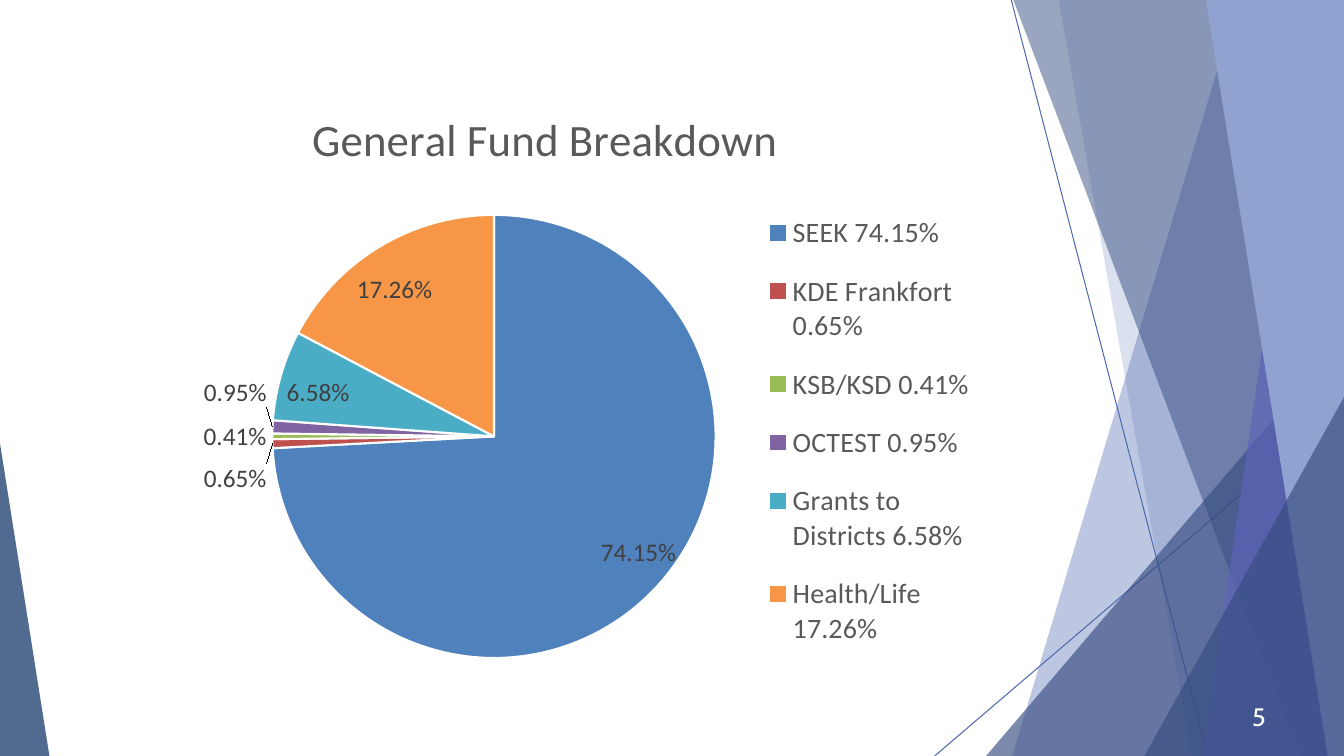
import pptx
import pptx.chart.data
import pptx.dml.color
import pptx.enum.chart
import pptx.enum.shapes
import pptx.oxml.ns
import pptx.util
from pptx.util import Inches

RGB = pptx.dml.color.RGBColor
BLUE = RGB(0x4A, 0x66, 0xAC)
NAVY = RGB(0x37, 0x4D, 0x81)
VIOLET = RGB(0x5C, 0x64, 0xB7)
PALE = RGB(0x90, 0xA2, 0xCF)
DEEP = RGB(0x07, 0x2C, 0x62)
WHITE = RGB(0xFF, 0xFF, 0xFF)
BLACK = RGB(0x00, 0x00, 0x00)
GREY = RGB(0x59, 0x59, 0x59)
DARK = RGB(0x40, 0x40, 0x40)
W, H = 13.33, 7.5
qn = pptx.oxml.ns.qn


def set_layout(parent, index, **values):
    """Give a chart part a manual layout, as fractions of the chart."""
    for old in parent.findall(qn("c:layout")):
        parent.remove(old)
    layout = parent.makeelement(qn("c:layout"))
    manual = layout.makeelement(qn("c:manualLayout"))
    layout.append(manual)
    for tag, value in values.items():
        manual.append(manual.makeelement(qn("c:" + tag), {"val": str(value)}))
    parent.insert(index, layout)


def style_font(font, size, color, name="Calibri"):
    for key, value in {"size": pptx.util.Pt(size), "name": name, "bold": False}.items():
        setattr(font, key, value)
    font.color.rgb = color


prs = pptx.Presentation()
prs.slide_width, prs.slide_height = Inches(W), Inches(H)
s = prs.slides.add_slide(prs.slide_layouts[6])

# Thin crossing lines
for x1, y1, x2, y2 in [(10.03, 0, 11.98, H), (W, 4.03, 9.27, H)]:
    line = s.shapes.add_connector(pptx.enum.shapes.MSO_CONNECTOR.STRAIGHT,
                                  Inches(x1), Inches(y1), Inches(x2), Inches(y2))
    line.line.color.rgb = BLUE
    line.line.width = pptx.util.Pt(0.72)
    sp_pr = line._element.spPr
    sp_pr.append(sp_pr.makeelement(qn("a:effectLst")))

# Translucent facets: points, colour, opacity in percent
facets = [
    ([(W, 0), (12.28, 0), (10.04, H), (W, H)], BLUE, 36),
    ([(W, 0), (10.5, 0), (11.82, H), (W, H)], BLUE, 20),
    ([(W, 3.34), (9.78, H), (W, H)], NAVY, 66),
    ([(W, 0), (10.05, 0), (12.89, H), (W, H)], NAVY, 50),
    ([(W, 0), (13.03, 0), (11.92, H), (W, H)], VIOLET, 70),
    ([(W, 0), (11.96, 0), (13.17, H), (W, H)], PALE, 100),
    ([(W, 3.94), (11.35, H), (W, H)], NAVY, 66),
    ([(0, 4.4), (0, H), (0.49, H)], DEEP, 70),
]
for points, color, opacity in facets:
    corners = [(Inches(x), Inches(y)) for x, y in points]
    builder = s.shapes.build_freeform(*corners[0])
    builder.add_line_segments(corners[1:], close=True)
    sp = builder.convert_to_shape()
    sp.shadow.inherit = False
    sp.line.fill.background()
    sp.fill.solid()
    sp.fill.fore_color.rgb = color
    if opacity < 100:
        clr = sp._element.spPr.find(".//" + qn("a:srgbClr"))
        clr.append(clr.makeelement(qn("a:alpha"), {"val": str(opacity * 1000)}))

# Pie chart: category, share, colour, label position, label shift
POSITION = pptx.enum.chart.XL_LABEL_POSITION
INSIDE, OUTSIDE = POSITION.INSIDE_END, POSITION.OUTSIDE_END
slices = [
    ("SEEK 74.15%", 0.7415, RGB(0x4F, 0x81, 0xBD), INSIDE, (0.03, -0.03)),
    ("KDE Frankfort 0.65%", 0.0065, RGB(0xC0, 0x50, 0x4D), OUTSIDE, (0, 0.06)),
    ("KSB/KSD 0.41%", 0.0041, RGB(0x9B, 0xBB, 0x59), OUTSIDE, None),
    ("OCTEST 0.95%", 0.0095, RGB(0x80, 0x64, 0xA2), OUTSIDE, (0, -0.06)),
    ("Grants to Districts 6.58%", 0.0658, RGB(0x4B, 0xAC, 0xC6), INSIDE, None),
    ("Health/Life 17.26%", 0.1726, RGB(0xF7, 0x96, 0x46), INSIDE, (-0.03, 0.04)),
]
data = pptx.chart.data.CategoryChartData(number_format="0.00%")
data.categories = [name for name, *_ in slices]
data.add_series("Series 1", [share for _, share, *_ in slices])
chart = s.shapes.add_chart(pptx.enum.chart.XL_CHART_TYPE.PIE, Inches(1.39), Inches(0.99),
                           Inches(8.56), Inches(5.71), data).chart
style_font(chart.font, 10, BLACK)

chart.has_title = True
title = chart.chart_title
title.text_frame.text = "General Fund Breakdown"
style_font(title.text_frame.paragraphs[0].runs[0].font, 32, GREY)
title.include_in_layout = False
set_layout(title._element, 1, xMode="edge", yMode="edge", x=0.19, y=0)

chart.has_legend = True
legend = chart.legend
legend.position = pptx.enum.chart.XL_LEGEND_POSITION.RIGHT
legend.include_in_layout = False
style_font(legend.font, 20, GREY)
set_layout(legend._element, 1, xMode="edge", yMode="edge", x=0.72, y=0.16, w=0.25, h=0.83)

plot = chart.plots[0]
plot.vary_by_categories = True
set_layout(plot._element.getparent(), 0, layoutTarget="inner", xMode="edge", yMode="edge",
           x=0.15, y=0.2, w=0.52, h=0.77)

plot.has_data_labels = True
labels = plot.series[0].data_labels
labels.show_value = True
labels.number_format = "0.00%"
labels.number_format_is_linked = False
style_font(labels.font, 18, DARK)

for i, (_, _, color, position, shift) in enumerate(slices):
    point = plot.series[0].points[i]
    point.format.fill.solid()
    point.format.fill.fore_color.rgb = color
    point.format.line.color.rgb = WHITE
    point.format.line.width = pptx.util.Pt(1.5)
    label = point.data_label
    style_font(label.font, 18, DARK)
    label.position = position
    if shift:
        set_layout(label._dLbl, 1, x=shift[0], y=shift[1])

# Slide number
tb = s.shapes.add_textbox(Inches(12.39), Inches(6.96), Inches(0.36), Inches(0.31))
tf = tb.text_frame
tf.word_wrap = True
for side in ("left", "right", "top", "bottom"):
    setattr(tf, "margin_" + side, 0)
p = tf.paragraphs[0]
p.line_spacing = pptx.util.Pt(21.1)
p._p.get_or_add_pPr().set("marL", str(Inches(0.03)))
r = p.add_run()
r.text = "5"
style_font(r.font, 18, WHITE, "Cabin")

prs.save("out.pptx")
